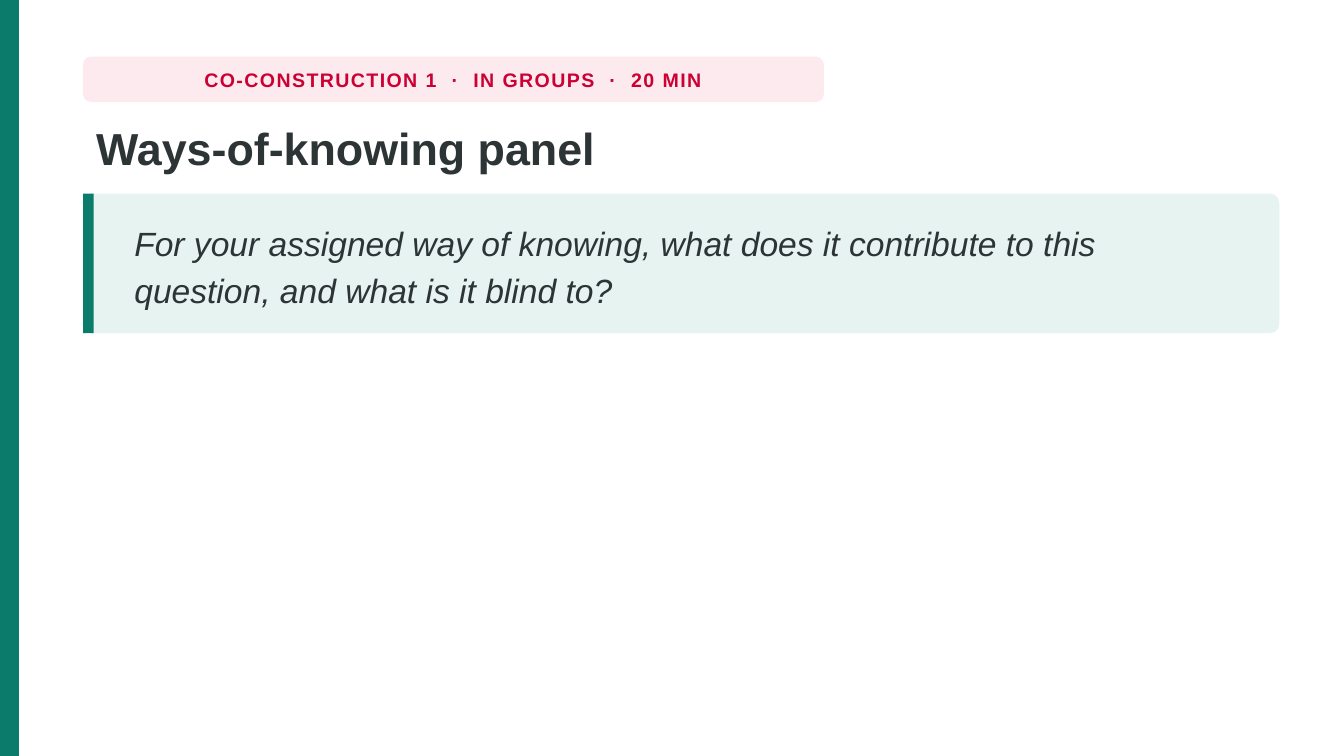
from dataclasses import dataclass

from pptx import Presentation
from pptx import util as u
from pptx.dml.color import RGBColor
from pptx.enum import shapes, text


@dataclass(frozen=True)
class Theme:
    font: str = "Arial"
    accent: str = "0B7B6B"
    accent_tint: str = "E6F3F0"
    label: str = "CC0033"
    label_tint: str = "FDEAEF"
    ink: str = "2D3436"
    background: str = "FFFFFF"
    label_size: float = 10.5
    title_size: float = 24
    question_size: float = 18


THEME = Theme()
SLIDE_WIDTH, SLIDE_HEIGHT = 25.4, 14.29
LEFT, CONTENT_WIDTH = 1.57, 22.61
LABEL_BOX = (LEFT, 1.07, 14, 0.86)
TITLE_BOX = (LEFT, 2.13, CONTENT_WIDTH, 1.42)
CARD_TOP, CARD_HEIGHT = 3.66, 2.64


def add_panel(slide, box, color, radius=None):
    """Add a filled rectangle, rounded when a corner radius in cm is given."""
    kind = shapes.MSO_SHAPE.ROUNDED_RECTANGLE if radius else shapes.MSO_SHAPE.RECTANGLE
    shape = slide.shapes.add_shape(kind, *map(u.Cm, box))
    if radius:
        shape.adjustments[0] = radius / min(box[2:])
    shape.shadow.inherit = False
    shape.fill.solid()
    shape.fill.fore_color.rgb = RGBColor.from_string(color)
    shape.line.fill.background()


def add_text(slide, box, content, *, size, color, bold=False, italic=False,
             align=text.PP_ALIGN.LEFT, anchor=text.MSO_ANCHOR.TOP,
             wrap=True, line_spacing=None, tracking=None):
    """Add one paragraph; tracking is letter spacing in points."""
    frame = slide.shapes.add_textbox(*map(u.Cm, box)).text_frame
    frame.word_wrap = wrap
    frame.vertical_anchor = anchor
    paragraph = frame.paragraphs[0]
    paragraph.alignment = align
    paragraph.line_spacing = line_spacing
    run = paragraph.add_run()
    run.text = content
    font = run.font
    font.name, font.size, font.bold, font.italic = THEME.font, u.Pt(size), bold, italic
    font.color.rgb = RGBColor.from_string(color)
    if tracking:
        run._r.get_or_add_rPr().set("spc", str(round(tracking * 100)))


def add_label(slide, content):
    add_panel(slide, LABEL_BOX, THEME.label_tint, radius=0.15)
    add_text(slide, LABEL_BOX, content, size=THEME.label_size, color=THEME.label,
             bold=True, align=text.PP_ALIGN.CENTER, anchor=text.MSO_ANCHOR.MIDDLE,
             wrap=False, tracking=0.8)


def add_question_card(slide, content):
    add_panel(slide, (LEFT, CARD_TOP, CONTENT_WIDTH, CARD_HEIGHT),
              THEME.accent_tint, radius=0.18)
    add_panel(slide, (LEFT, CARD_TOP, 0.2, CARD_HEIGHT), THEME.accent)
    padding = 0.13
    box = (LEFT + 0.72, CARD_TOP + padding, 21.21, CARD_HEIGHT - 2 * padding)
    add_text(slide, box, content, size=THEME.question_size, color=THEME.ink,
             italic=True, anchor=text.MSO_ANCHOR.MIDDLE, line_spacing=1.16)


def main():
    presentation = Presentation()
    presentation.slide_width = u.Cm(SLIDE_WIDTH)
    presentation.slide_height = u.Cm(SLIDE_HEIGHT)
    slide = presentation.slides.add_slide(presentation.slide_layouts[6])
    slide.background.fill.solid()
    slide.background.fill.fore_color.rgb = RGBColor.from_string(THEME.background)

    add_panel(slide, (0, 0, 0.36, SLIDE_HEIGHT), THEME.accent)
    add_label(slide, "CO-CONSTRUCTION 1  ·  IN GROUPS  ·  20 MIN")
    add_text(slide, TITLE_BOX, "Ways-of-knowing panel", size=THEME.title_size,
             color=THEME.ink, bold=True, line_spacing=1.02)
    add_question_card(slide, "For your assigned way of knowing, what does it contribute "
                             "to this question, and what is it blind to?")
    presentation.save("out.pptx")


if __name__ == "__main__":
    main()
